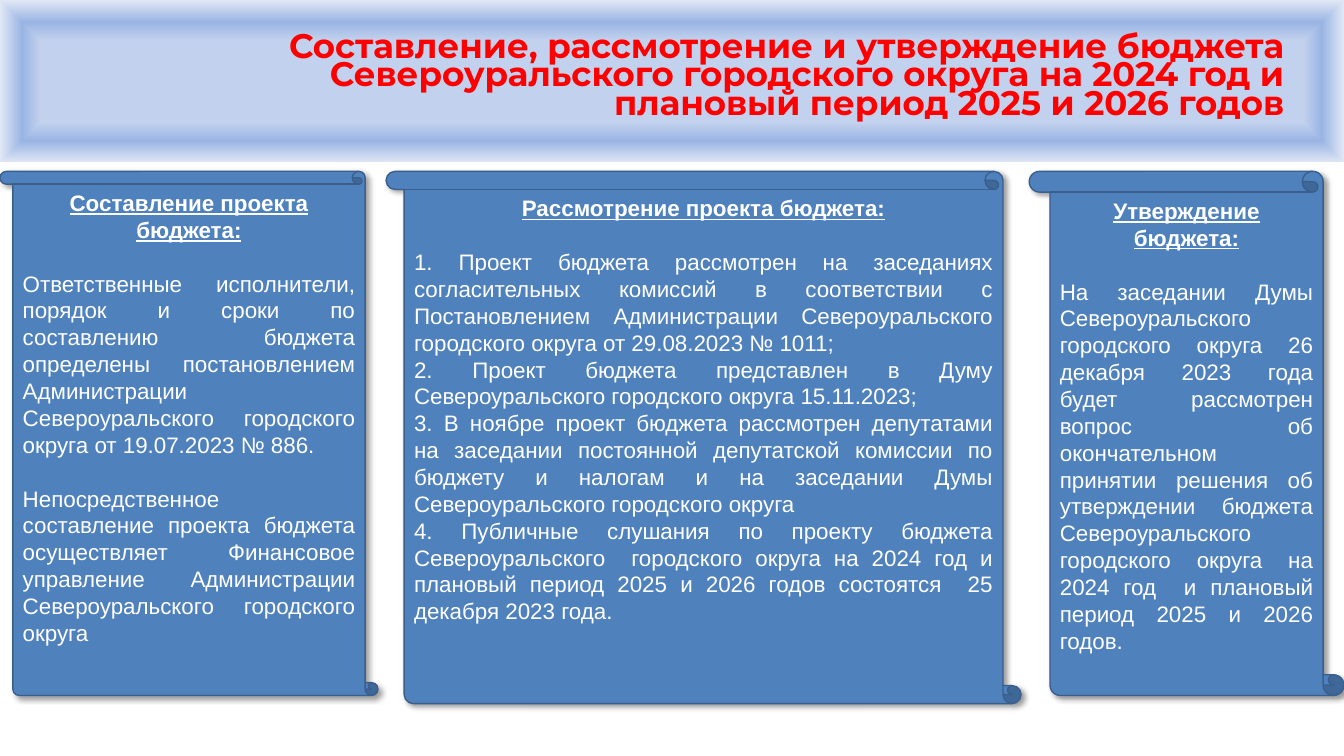
from pptx import Presentation
from pptx.dml.color import RGBColor
from pptx.enum.shapes import MSO_CONNECTOR, MSO_SHAPE
from pptx.enum.text import MSO_ANCHOR, PP_ALIGN
from pptx.oxml import parse_xml
from pptx.oxml.ns import nsdecls
from pptx.util import Pt

RECT, SCROLL = MSO_SHAPE.RECTANGLE, MSO_SHAPE.VERTICAL_SCROLL
STRAIGHT = MSO_CONNECTOR.STRAIGHT
TOP, BOTTOM = MSO_ANCHOR.TOP, MSO_ANCHOR.BOTTOM
CENTER, RIGHT, JUSTIFY = PP_ALIGN.CENTER, PP_ALIGN.RIGHT, PP_ALIGN.JUSTIFY

COLORS = {
    "white": "FFFFFF", "black": "000000", "title": "FF0000",
    "scroll": "4F81BD", "edge": "3A5F8C",
    "inner": "C2D1ED", "middle": "9AB5E4", "outer": "E1E8F5",
}
WIDTH, HEIGHT, BANNER = 960, 540, 116.6
LINE = Pt(19.2)

TITLE = ("Составление, рассмотрение и утверждение бюджета Североуральского "
         "городского округа на 2024 год и плановый период 2025 и 2026 годов")

# left, top, width, height, roll size, heading, body paragraphs, gap between them
PANELS = [
    (0, 122.4, 270, 374.4, 0.034, "Составление проекта бюджета:", [
        "Ответственные исполнители, порядок и сроки по составлению бюджета "
        "определены постановлением Администрации Североуральского городского "
        "округа от 19.07.2023 № 886.",
        "Непосредственное составление проекта бюджета осуществляет Финансовое "
        "управление Администрации Североуральского городского округа",
    ], LINE),
    (275.8, 122.4, 453.6, 380.2, 0.034, "Рассмотрение проекта бюджета:", [
        "1. Проект бюджета рассмотрен на заседаниях согласительных комиссий в "
        "соответствии с Постановлением Администрации Североуральского "
        "городского округа от 29.08.2023 № 1011;",
        "2. Проект бюджета представлен в Думу Североуральского городского "
        "округа 15.11.2023;",
        "3. В ноябре проект бюджета рассмотрен депутатами на заседании "
        "постоянной депутатской комиссии по бюджету и налогам и на заседании "
        "Думы Североуральского городского округа",
        "4. Публичные слушания по проекту бюджета Североуральского  городского "
        "округа на 2024 год и плановый период 2025 и 2026 годов состоятся  25 "
        "декабря 2023 года.",
    ], Pt(0)),
    (735.2, 122.4, 224.8, 374.4, 0.066, "Утверждение бюджета:", [
        "На заседании Думы Североуральского городского округа 26 декабря 2023 "
        "года будет рассмотрен вопрос об окончательном принятии решения об "
        "утверждении бюджета Североуральского городского округа на 2024 год  и "
        "плановый период 2025 и 2026 годов.",
    ], Pt(0)),
]


def rgb(name):
    return RGBColor.from_string(COLORS[name])


def shadow():
    return parse_xml(
        f'<a:effectLst {nsdecls("a")}><a:outerShdw blurRad="{Pt(4)}" '
        f'dist="{Pt(3)}" dir="2700000" algn="tl" rotWithShape="0">'
        f'<a:srgbClr val="{COLORS["black"]}"><a:alpha val="40000"/></a:srgbClr>'
        '</a:outerShdw></a:effectLst>')


def add_banner(slide):
    banner = slide.shapes.add_shape(RECT, 0, 0, Pt(WIDTH), Pt(BANNER))
    banner.shadow.inherit = False
    banner.line.fill.background()
    stops = "".join(
        f'<a:gs pos="{pos}000"><a:srgbClr val="{COLORS[name]}"/></a:gs>'
        for pos, name in ((50, "inner"), (73, "middle"), (100, "outer")))
    banner._element.spPr.insert(2, parse_xml(
        f'<a:gradFill {nsdecls("a")} rotWithShape="1"><a:gsLst>{stops}</a:gsLst>'
        '<a:path path="shape"><a:fillToRect l="50000" t="50000" r="50000" '
        'b="50000"/></a:path></a:gradFill>'))


def add_rule(slide):
    rule = slide.shapes.add_connector(
        STRAIGHT, 0, Pt(BANNER), Pt(WIDTH), Pt(BANNER))
    rule.line.color.rgb = rgb("white")
    rule.line.width = Pt(2)
    rule._element.spPr.append(parse_xml(f'<a:effectLst {nsdecls("a")}/>'))


def add_panel(slide, left, top, width, height, roll, head, body, gap):
    """Add a mirrored scroll with an underlined heading and justified text."""
    panel = slide.shapes.add_shape(
        SCROLL, Pt(left), Pt(top), Pt(width), Pt(height))
    panel.adjustments[0] = roll
    panel.fill.solid()
    panel.fill.fore_color.rgb = rgb("scroll")
    panel.line.color.rgb = rgb("edge")
    panel.line.width = Pt(1)
    props = panel._element.spPr
    props.xfrm.set("flipH", "1")
    props.append(shadow())

    frame = panel.text_frame
    frame.word_wrap = True
    frame.vertical_anchor = TOP
    for i, text in enumerate([head, *body]):
        para = frame.add_paragraph() if i else frame.paragraphs[0]
        para.text = text
        para.alignment = JUSTIFY if i else CENTER
        para.line_spacing = LINE
        if i:
            para.space_before = LINE if i == 1 else gap
        font = para.font
        font.name, font.size = "Arial", Pt(16)
        font.bold = font.underline = i == 0
        font.color.rgb = rgb("white")


def add_title(slide):
    box = slide.shapes.add_textbox(Pt(190.8), Pt(11.5), Pt(733.7), Pt(78.5))
    frame = box.text_frame
    frame.word_wrap = True
    frame.vertical_anchor = BOTTOM
    para = frame.paragraphs[0]
    para.alignment = RIGHT
    para.line_spacing = 0.7
    run = para.add_run()
    run.text = TITLE
    font = run.font
    font.size, font.bold = Pt(24.3), True
    font.color.rgb = rgb("title")
    props = run._r.get_or_add_rPr()
    props.insert(0, parse_xml(
        f'<a:ln {nsdecls("a")} w="{Pt(1.5)}"><a:solidFill>'
        f'<a:srgbClr val="{COLORS["white"]}"/></a:solidFill></a:ln>'))
    props.append(shadow())
    font.name = "Montserrat"


def main():
    deck = Presentation()
    deck.slide_width, deck.slide_height = Pt(WIDTH), Pt(HEIGHT)
    slide = deck.slides.add_slide(deck.slide_layouts[6])
    add_banner(slide)
    add_rule(slide)
    for panel in PANELS:
        add_panel(slide, *panel)
    add_title(slide)
    deck.save("out.pptx")


if __name__ == "__main__":
    main()
